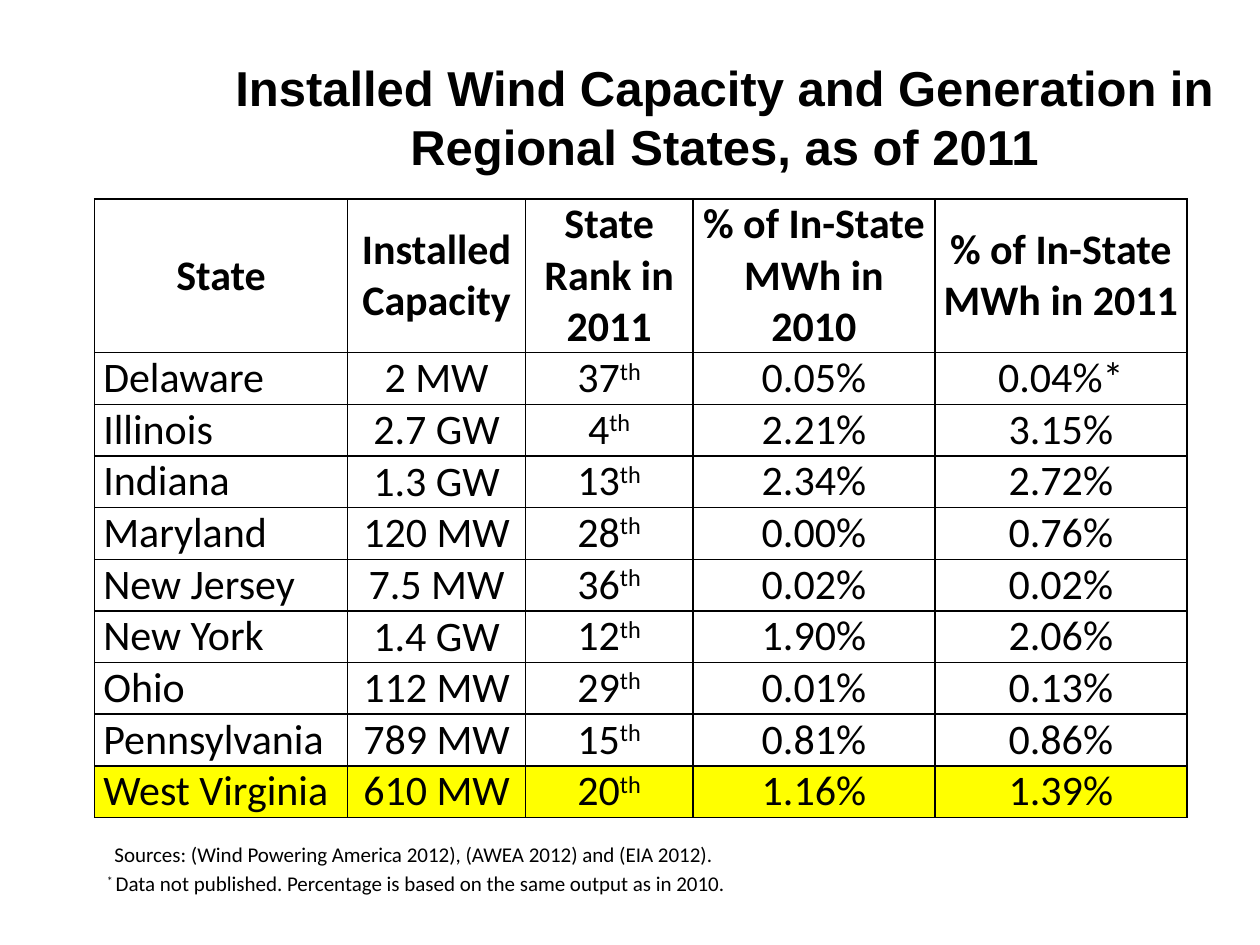
from pptx import Presentation
from pptx.dml.color import RGBColor
from pptx.enum.text import MSO_ANCHOR as Anchor, PP_ALIGN as Align
from pptx.oxml import parse_xml
from pptx.oxml.ns import nsdecls
from pptx.util import Inches, Pt

BLACK, YELLOW = "000000", "FFFF00"
COLUMN_WIDTHS = [2.01, 1.41, 1.33, 1.92, 2]
HEADER_HEIGHT, ROW_HEIGHT = 1.22, 0.41
HEADERS = ["State", "Installed Capacity", "State Rank in 2011",
           "% of In-State MWh in 2010", "% of In-State MWh in 2011"]
STATES = [
    ("Delaware", "2 MW", "37", "0.05%", "0.04%*"),
    ("Illinois", "2.7 GW", "4", "2.21%", "3.15%"),
    ("Indiana", "1.3 GW", "13", "2.34%", "2.72%"),
    ("Maryland", "120 MW", "28", "0.00%", "0.76%"),
    ("New Jersey", "7.5 MW", "36", "0.02%", "0.02%"),
    ("New York", "1.4 GW", "12", "1.90%", "2.06%"),
    ("Ohio", "112 MW", "29", "0.01%", "0.13%"),
    ("Pennsylvania", "789 MW", "15", "0.81%", "0.86%"),
    ("West Virginia", "610 MW", "20", "1.16%", "1.39%"),
]


def color(code):
    return RGBColor.from_string(code)


def format_span(span, size, font="Calibri", bold=False, raised=False):
    span.font.size = Pt(size)
    span.font.name = font
    span.font.bold = bold
    span.font.color.rgb = color(BLACK)
    if raised:
        span._r.get_or_add_rPr().set("baseline", "30000")


def add_text(page, left, top, width, height, text, size, font="Calibri",
             bold=False, align=Align.LEFT, mark=""):
    """Add a one-paragraph text box, optionally led by a superscript mark."""
    box = page.shapes.add_textbox(Inches(left), Inches(top), Inches(width), Inches(height))
    frame = box.text_frame
    frame.word_wrap = True
    frame.vertical_anchor = Anchor.MIDDLE
    para = frame.paragraphs[0]
    para.alignment = align
    if mark:
        span = para.add_run()
        span.text = mark
        format_span(span, size, font, bold, raised=True)
    span = para.add_run()
    span.text = text
    format_span(span, size, font, bold)


def add_borders(cell):
    properties = cell._tc.get_or_add_tcPr()
    for side in ("lnL", "lnR", "lnT", "lnB"):
        properties.append(parse_xml(
            f'<a:{side} {nsdecls("a")} w="{Pt(1)}"><a:solidFill>'
            f'<a:srgbClr val="{BLACK}"/></a:solidFill></a:{side}>'))


def fill_cell(cell, text, align=Align.CENTER, anchor=Anchor.TOP, bold=False,
              fill=None, suffix=""):
    cell.margin_left = cell.margin_right = Inches(0.07)
    cell.margin_top = cell.margin_bottom = 0
    cell.vertical_anchor = anchor
    add_borders(cell)
    if fill:
        cell.fill.solid()
        cell.fill.fore_color.rgb = color(fill)
    else:
        cell.fill.background()
    para = cell.text_frame.paragraphs[0]
    para.text = text
    para.alignment = align
    format_span(para.runs[0], 24, bold=bold)
    if suffix:
        span = para.add_run()
        span.text = suffix
        format_span(span, 24, raised=True)


def add_state_table(page):
    height = HEADER_HEIGHT + ROW_HEIGHT * len(STATES)
    frame = page.shapes.add_table(len(STATES) + 1, len(HEADERS), Inches(0.75), Inches(1.58),
                                  Inches(sum(COLUMN_WIDTHS)), Inches(height))
    table = frame.table
    table.first_row = table.horz_banding = False
    for column, width in zip(table.columns, COLUMN_WIDTHS):
        column.width = Inches(width)
    for index, row in enumerate(table.rows):
        row.height = Inches(ROW_HEIGHT if index else HEADER_HEIGHT)

    # Header row
    for col, header in enumerate(HEADERS):
        fill_cell(table.cell(0, col), header, anchor=Anchor.MIDDLE, bold=True)

    # One row per state, with West Virginia highlighted
    for row, values in enumerate(STATES, start=1):
        fill = YELLOW if values[0] == "West Virginia" else None
        for col, value in enumerate(values):
            fill_cell(table.cell(row, col), value, fill=fill,
                      align=Align.JUSTIFY if col == 0 else Align.CENTER,
                      anchor=Anchor.MIDDLE if col == 1 else Anchor.TOP,
                      suffix="th" if col == 2 else "")


def main():
    deck = Presentation()
    deck.slide_width, deck.slide_height = Inches(10), Inches(7.5)
    page = deck.slides.add_slide(deck.slide_layouts[6])

    # Title
    add_text(page, 1.25, 0.3, 9, 1.25,
             "Installed Wind Capacity and Generation in Regional States, as of 2011",
             28, font="Arial", bold=True, align=Align.CENTER)

    add_state_table(page)

    # Sources and footnote
    add_text(page, 0.81, 6.63, 5.25, 0.3,
             "Sources: (Wind Powering America 2012), (AWEA 2012) and (EIA 2012).", 12)
    add_text(page, 0.75, 6.86, 6.5, 0.3,
             "Data not published. Percentage is based on the same output as in 2010.",
             12, mark="* ")

    deck.save("out.pptx")


if __name__ == "__main__":
    main()
